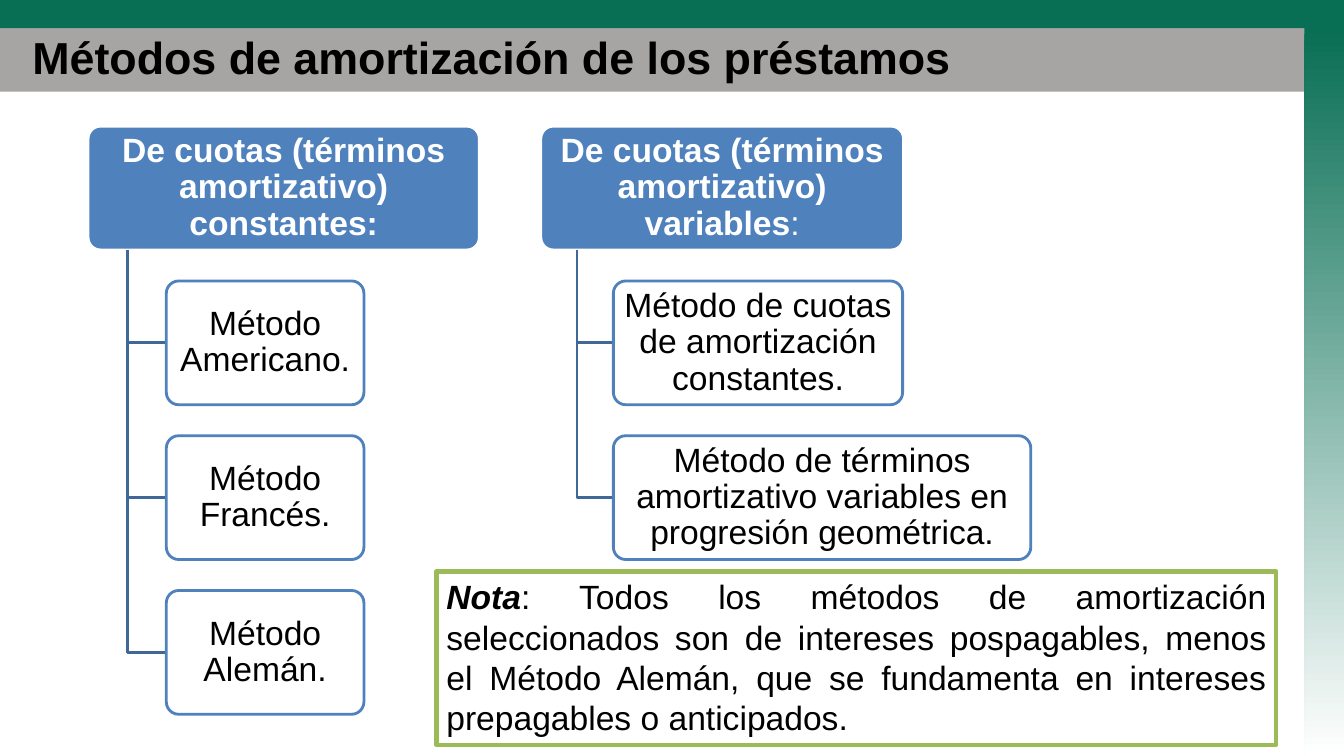
from pptx import Presentation
from pptx.dml.color import RGBColor as Rgb
from pptx.enum.shapes import MSO_SHAPE as Shape
from pptx.enum.text import MSO_ANCHOR as Anchor, MSO_AUTO_SIZE as Size, PP_ALIGN as Align
from pptx.oxml.ns import qn
from pptx.util import Cm, Pt
from lxml.etree import SubElement as Sub

HUES = {"green": "086E54", "gray": "A6A5A4", "white": "FFFFFF", "black": "000000",
        "blue": "4F81BD", "navy": "3F6797", "lime": "9BBB59"}
WIDE, HIGH = 33.87, 19.05
TOP, BAND, SIDE = 0.71, 1.6, 1.0
NODE, STEP = 3.12, 3.9


def hue(name):
    """Return the named colour."""
    return Rgb.from_string(HUES[name])


def block(slide, kind, box, fill, line=None, width=2):
    """Add a flat shape with the given fill and line."""
    shape = slide.shapes.add_shape(kind, *[Cm(v) for v in box])
    shape.shadow.inherit = False
    shape.fill.solid()
    shape.fill.fore_color.rgb = hue(fill)
    if line:
        shape.line.color.rgb = hue(line)
        shape.line.width = Pt(width)
    else:
        shape.line.fill.background()
    return shape


def style(run, size, tint, bold=False, slant=False):
    """Format one run of text."""
    font = run.font
    font.name, font.size = "Arial", Pt(size)
    font.bold, font.italic = bold, slant
    font.color.rgb = hue(tint)


def head(slide, text):
    """Draw the bands and place the title over them."""
    block(slide, Shape.RECTANGLE, (0, TOP, WIDE, BAND), "gray")
    block(slide, Shape.RECTANGLE, (0, 0, WIDE, TOP), "green")
    side = block(slide, Shape.RECTANGLE, (WIDE - SIDE, TOP, SIDE, HIGH - TOP), "green")
    side.fill.gradient()
    side.fill.gradient_angle = 270
    for stop, name in zip(side.fill.gradient_stops, ("green", "white")):
        stop.color.rgb = hue(name)
    title = slide.shapes.title
    slide.shapes._spTree.append(title._element)
    title.left, title.top, title.width, title.height = Cm(0.56), Cm(0.76), Cm(32.18), Cm(1.35)
    frame = title.text_frame
    frame.text = text
    frame.auto_size = Size.NONE
    frame.vertical_anchor = Anchor.MIDDLE
    frame.paragraphs[0].alignment = Align.LEFT
    style(frame.paragraphs[0].runs[0], 32, "black", True)


def node(slide, box, text, fill, line, tint, bold=False):
    """Draw one rounded box with centred text."""
    shape = block(slide, Shape.ROUNDED_RECTANGLE, box, fill, line)
    shape.adjustments[0] = 0.1
    frame = shape.text_frame
    frame.text = text
    frame.word_wrap = True
    frame.vertical_anchor = Anchor.MIDDLE
    frame.margin_left = frame.margin_right = Cm(0.13)
    frame.margin_top = frame.margin_bottom = Cm(0.08)
    para = frame.paragraphs[0]
    para.alignment, para.line_spacing = Align.CENTER, 0.9
    style(para.runs[0], 24, tint, bold)
    return shape


def elbow(slide, x, y, dx, dy):
    """Draw a bent line down and then right."""
    form = slide.shapes.build_freeform(Cm(x), Cm(y))
    form.add_line_segments([(Cm(x), Cm(y + dy)), (Cm(x + dx), Cm(y + dy))], close=False)
    bend = form.convert_to_shape()
    bend.shadow.inherit = False
    bend.fill.background()
    bend.line.color.rgb = hue("navy")
    bend.line.width = Pt(2)


def tree(slide, x, y, width, text, tail, leaves):
    """Draw a heading box and the leaves that hang from it."""
    root = node(slide, (x, y, width, NODE), text, "blue", "white", "white", True)
    if tail:
        run = root.text_frame.paragraphs[0].add_run()
        run.text = tail
        style(run, 24, "white")
    gap = width / 10
    for i, (label, span) in enumerate(leaves, 1):
        drop = i * STEP
        elbow(slide, x + gap, y + NODE, gap, drop - NODE / 2)
        leaf = node(slide, (x + 2 * gap, y + drop, span, NODE), label, "white", "blue", "black")
        color = leaf.fill._xPr.find(qn("a:solidFill"))[0]
        Sub(color, qn("a:alpha"), val="90000")


def note(slide, box, lead, text):
    """Draw the framed note with its bold lead word."""
    shape = block(slide, Shape.RECTANGLE, box, "white", "lime", 3)
    frame = shape.text_frame
    frame.text = lead
    frame.word_wrap = True
    frame.auto_size = Size.SHAPE_TO_FIT_TEXT
    frame.vertical_anchor = Anchor.TOP
    para = frame.paragraphs[0]
    para.alignment = Align.JUSTIFY
    style(para.runs[0], 24, "black", True, True)
    rest = para.add_run()
    rest.text = text
    style(rest, 24, "black")


def main():
    """Build the slide and save it."""
    deck = Presentation()
    deck.slide_width, deck.slide_height = Cm(WIDE), Cm(HIGH)
    slide = deck.slides.add_slide(deck.slide_layouts[5])
    head(slide, "Métodos de amortización de los préstamos")
    tree(slide, 2.22, 3.18, 9.86, "De cuotas (términos amortizativo) constantes:", "",
         [(f"Método {name}.", 4.98) for name in ("Americano", "Francés", "Alemán")])
    tree(slide, 13.63, 3.18, 9.14, "De cuotas (términos amortizativo) variables", ":",
         [("Método de cuotas de amortización constantes.", 7.29),
          ("Método de términos amortizativo variables en progresión geométrica.", 10.52)])
    note(slide, (11, 14.4, 21.16, 4.37), "Nota",
         ": Todos los métodos de amortización seleccionados son de intereses pospagables, "
         "menos el Método Alemán, que se fundamenta en intereses prepagables o anticipados.")
    deck.save("out.pptx")


if __name__ == "__main__":
    main()
